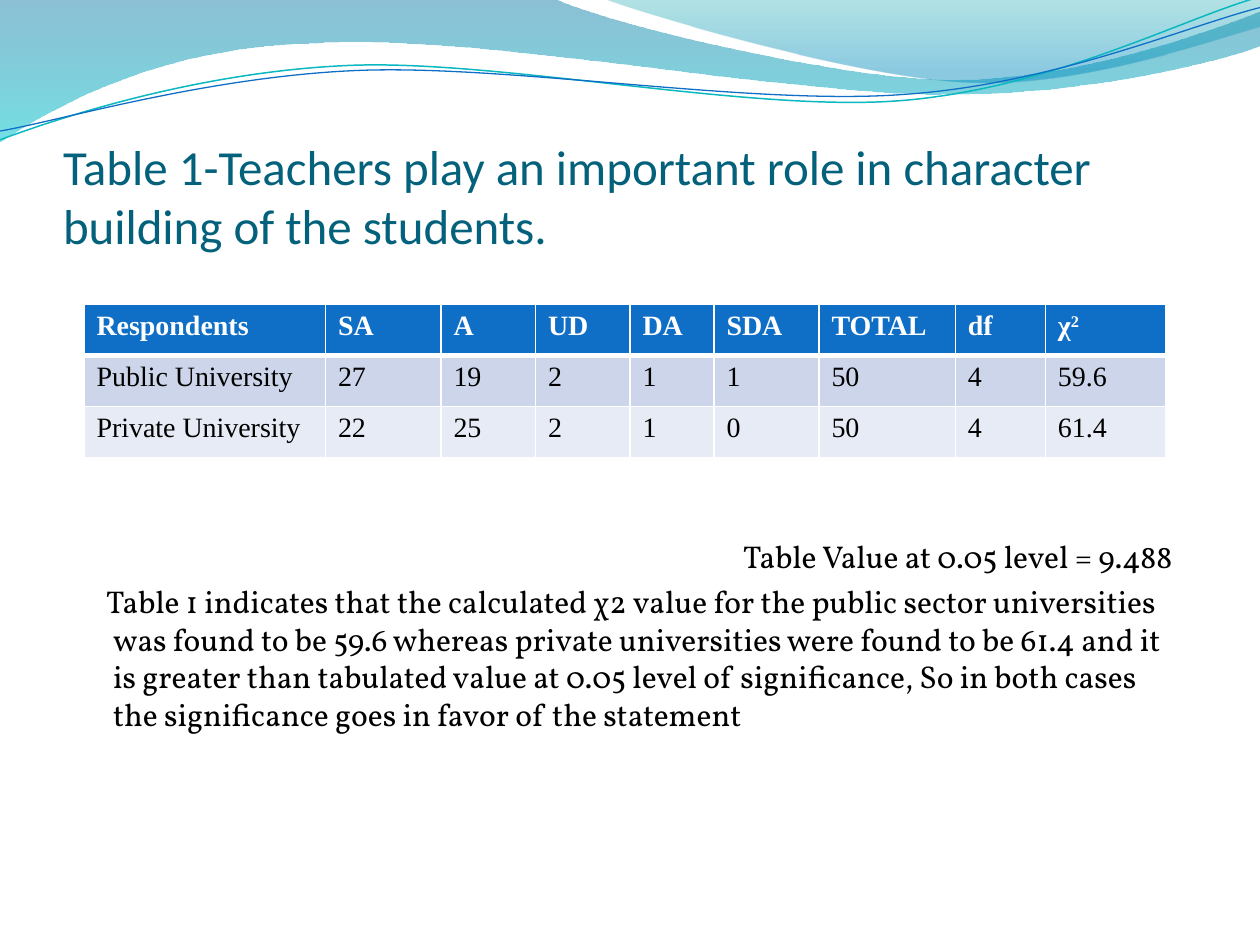
from math import cos, radians, sin

from lxml.etree import SubElement
from pptx import Presentation
from pptx.dml.color import RGBColor
from pptx.enum.text import MSO_ANCHOR, MSO_AUTO_SIZE, PP_ALIGN
from pptx.oxml.ns import qn
from pptx.util import Pt

TITLE = "Table 1-Teachers play an important role in character building of the students."
LEVEL = "Table Value at 0.05 level = 9.488"
FINDING = (
    "Table 1 indicates that the calculated χ2 value for the public sector universities "
    "was found to be 59.6 whereas private universities were found to be 61.4 and it is "
    "greater than tabulated value at 0.05 level of significance, So in both cases the "
    "significance goes in favor of the statement"
)
ROWS = [
    ["Respondents", "SA", "A", "UD", "DA", "SDA", "TOTAL", "df", "χ"],
    ["Public University", "27", "19", "2", "1", "1", "50", "4", "59.6"],
    ["Private University", "22", "25", "2", "1", "0", "50", "4", "61.4"],
]
COL_WIDTHS = [138, 66, 54, 54, 48, 60, 78, 51.4, 68.6]
ROW_FILLS = ["0F6FC6", "CCD5EA", "E7EBF5"]

LEFT_WAVE = [
    (0, 0), (316.8, -0.7),
    (342.7, 12.2, 478.1, 45.4, 545.8, 45.4), (614.2, 45.4, 689.8, 18.7, 720, 6.5),
    (720.7, 25.9),
    (707.8, 31.7, 626.4, 54.7, 537.1, 54), (447.8, 54, 275, 20.2, 185, 24.5),
    (92.2, 25.9, 33.1, 59.8, -0.7, 81.4), (0, 0),
]
RIGHT_WAVE = [
    (344.9, -0.7),
    (366.5, 7.9, 491, 44.6, 553.7, 46.8), (616.3, 49.7, 691.9, 23, 720, 15.1),
    (720, 0), (344.9, -0.7),
]
TEAL_LINE = [
    (0, 79.9), (34.6, 67, 113.8, 41, 199.4, 37.4),
    (284.4, 33.8, 427, 64.1, 513.4, 57.6), (599.8, 51.1, 675.4, 10.8, 718.6, -1.4),
]
BLUE_LINE = [
    (0, 74.9), (33.8, 69.1, 118.1, 43.9, 203.8, 40.3),
    (290.2, 36.7, 429.8, 60.5, 516.2, 54), (601.9, 48.2, 677.5, 15.1, 720, 4.3),
]
TILT = -2.7


def rgb(value):
    """Return the colour for a hex string."""
    return RGBColor.from_string(value)


def add_text(p, text, font, size, color, bold=False, baseline=0):
    """Append a formatted run to a paragraph."""
    r = p.add_run()
    r.text = text
    r.font.name, r.font.size, r.font.bold = font, Pt(size), bold
    r.font.color.rgb = rgb(color)
    if baseline:
        r.font._element.set("baseline", str(baseline * 1000))


def to_local(x, y, frame, tilt):
    """Map a slide point into the untilted frame of a shape."""
    left, top, width, height = frame
    dx, dy, a = x - left - width / 2, y - top - height / 2, radians(-tilt)
    return (Pt(width / 2 + dx * cos(a) - dy * sin(a)),
            Pt(height / 2 + dx * sin(a) + dy * cos(a)))


def add_outline(s, segments, frame, close, tilt=0):
    """Build a freeform whose six-number segments are cubic curves."""
    ends = [to_local(*seg[-2:], frame, tilt) for seg in segments]
    builder = s.shapes.build_freeform(*ends[0])
    builder.add_line_segments(ends[1:], close=close)
    sp = builder.convert_to_shape()
    sp.left, sp.top, sp.width, sp.height = (Pt(v) for v in frame)
    sp.rotation = tilt
    sp.shadow.inherit = False
    outline = sp.element.spPr.find(".//" + qn("a:path"))
    outline.set("w", str(sp.width))
    outline.set("h", str(sp.height))
    for node, seg in zip(list(outline), segments):
        for pt in list(node):
            node.remove(pt)
        if len(seg) == 6:
            curve = SubElement(outline, qn("a:cubicBezTo"))
            outline.replace(node, curve)
            node = curve
        for x, y in zip(seg[::2], seg[1::2]):
            px, py = to_local(x, y, frame, tilt)
            SubElement(node, qn("a:pt"), x=str(px), y=str(py))
    return sp


def add_wave(s, segments, frame, stops):
    """Add a wave with a translucent downward gradient."""
    sp = add_outline(s, segments, frame, True)
    sp.line.fill.background()
    sp.fill.gradient()
    sp.fill.gradient_angle = 270
    for stop, (position, color, _) in zip(sp.fill.gradient_stops, stops):
        stop.position = position
        stop.color.rgb = rgb(color)
    colors = sp.element.spPr.find(qn("a:gradFill")).iter(qn("a:srgbClr"))
    for clr, (_, _, opacity) in zip(colors, stops):
        SubElement(clr, qn("a:alpha")).set("val", str(opacity * 1000))


def add_curve(s, segments, frame, color, width):
    """Add an open, slightly tilted curved line."""
    sp = add_outline(s, segments, frame, False, TILT)
    sp.fill.background()
    sp.line.color.rgb = rgb(color)
    sp.line.width = Pt(width)


def set_title(s):
    """Place and format the title placeholder."""
    sp = s.shapes.title
    sp.left, sp.top, sp.width, sp.height = Pt(36), Pt(55.4), Pt(648), Pt(90)
    tf = sp.text_frame
    tf.margin_left = tf.margin_right = tf.margin_bottom = 0
    tf.margin_top = Pt(3.6)
    tf.word_wrap = True
    tf.auto_size = MSO_AUTO_SIZE.NONE
    tf.vertical_anchor = MSO_ANCHOR.BOTTOM
    p = tf.paragraphs[0]
    p.alignment = PP_ALIGN.LEFT
    add_text(p, TITLE, font="Calibri", size=28, color="04617B")


def set_borders(cell, bottom, top):
    """Give a cell white borders."""
    tc_pr = cell._tc.get_or_add_tcPr()
    for side, width in (("L", 1), ("R", 1), ("T", top), ("B", bottom)):
        ln = SubElement(tc_pr, qn(f"a:ln{side}"), w=str(Pt(width)))
        SubElement(SubElement(ln, qn("a:solidFill")), qn("a:srgbClr"), val="FFFFFF")


def add_results(s):
    """Add the table of responses."""
    table = s.shapes.add_table(
        len(ROWS), len(COL_WIDTHS), Pt(48), Pt(174), Pt(sum(COL_WIDTHS)), Pt(87.6)
    ).table
    table.horz_banding = False
    for col, width in zip(table.columns, COL_WIDTHS):
        col.width = Pt(width)
    for i, (values, fill) in enumerate(zip(ROWS, ROW_FILLS)):
        table.rows[i].height = Pt(29.2)
        head = i == 0
        fmt = dict(font="Times New Roman", size=16, bold=head,
                   color="FFFFFF" if head else "000000")
        for j, value in enumerate(values):
            cell = table.cell(i, j)
            set_borders(cell, bottom=3 if head else 1, top=3 if i == 1 else 1)
            cell.fill.solid()
            cell.fill.fore_color.rgb = rgb(fill)
            p = cell.text_frame.paragraphs[0]
            add_text(p, value, **fmt)
            if value == "χ":
                add_text(p, "2", baseline=30, **fmt)


def add_findings(s):
    """Add the text below the table."""
    tf = s.shapes.add_textbox(Pt(36), Pt(152.6), Pt(648), Pt(345.6)).text_frame
    tf.word_wrap = True
    tf.margin_left, tf.margin_right, tf.margin_top = Pt(7.2), Pt(14), Pt(154.3)
    fmt = dict(font="Vollkorn", size=18, color="000000")
    p = tf.paragraphs[0]
    p.alignment = PP_ALIGN.RIGHT
    add_text(p, LEVEL, **fmt)
    p = tf.add_paragraph()
    p.space_before = Pt(4)
    p_pr = p._p.get_or_add_pPr()
    p_pr.set("marL", str(Pt(21.6)))
    p_pr.set("indent", str(Pt(-4)))
    add_text(p, FINDING, **fmt)


def main():
    """Build and save the slide."""
    prs = Presentation()
    prs.slide_width, prs.slide_height = Pt(720), Pt(540)
    s = prs.slides.add_slide(prs.slide_layouts[5])
    add_wave(s, LEFT_WAVE, (-0.7, -0.7, 721.4, 82.1), [(0, "0074A1", 45), (1, "00C6CF", 55)])
    add_wave(s, RIGHT_WAVE, (344.9, -0.7, 375.1, 50.4),
             [(0, "00A1A9", 30), (0.8, "008BBF", 45)])
    add_curve(s, TEAL_LINE, (-1.4, 15.8, 721.4, 51.1), "0AB8BF", 0.85)
    add_curve(s, BLUE_LINE, (-1.4, 21.6, 722.2, 41.8), "0F6FC6", 0.75)
    set_title(s)
    add_findings(s)
    add_results(s)
    prs.save("out.pptx")


if __name__ == "__main__":
    main()
